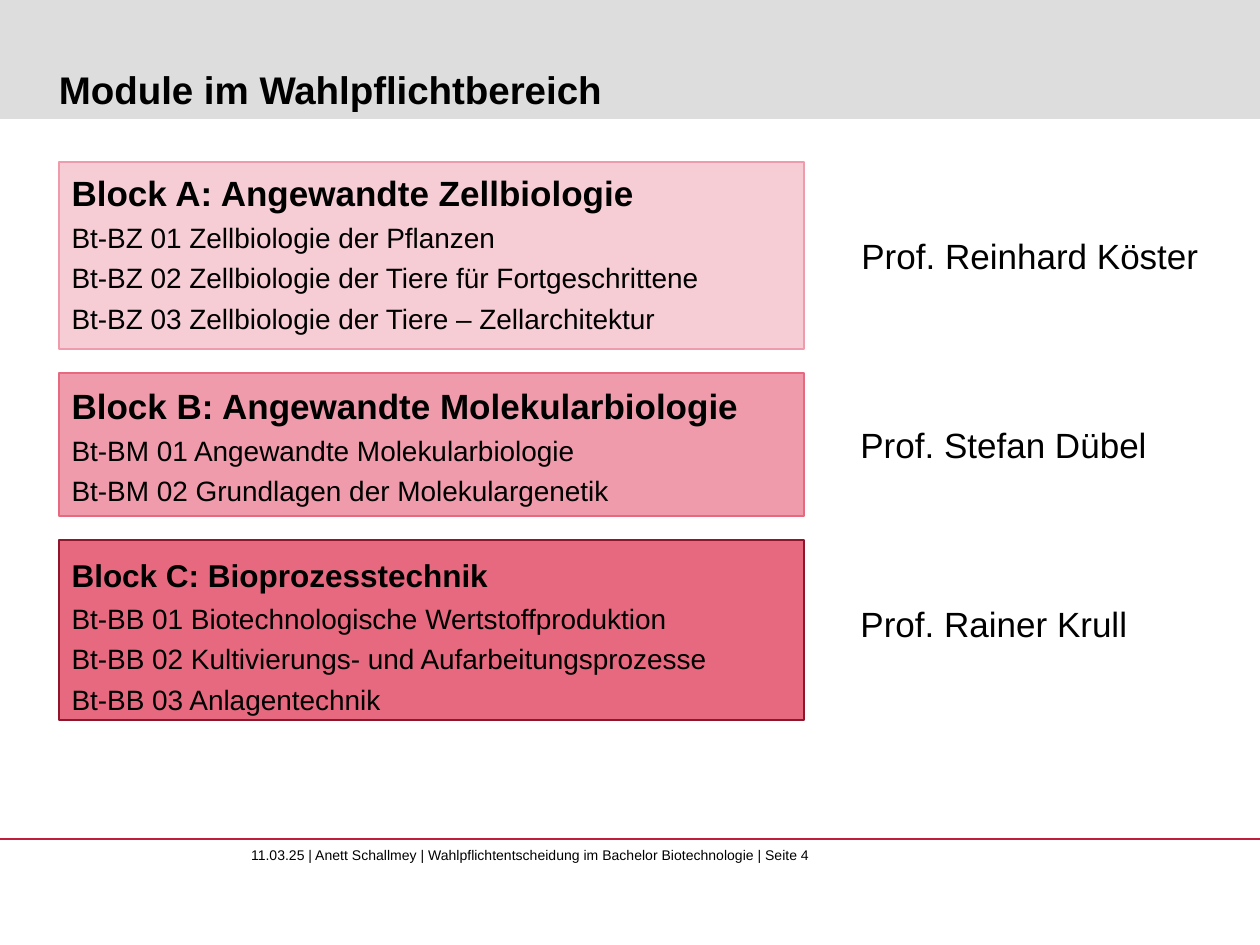
"""Build the slide that lists the elective module blocks and their heads."""
from typing import NamedTuple

from lxml import etree
from pptx import Presentation
from pptx import util as u
from pptx.dml.color import RGBColor
from pptx.enum import shapes, text
from pptx.oxml.ns import qn

SCALE = 914400 / 126
BLACK = RGBColor(0x00, 0x00, 0x00)
GREY = RGBColor(0xDD, 0xDD, 0xDD)
RED = RGBColor(0xBE, 0x1E, 0x3C)
PALE = RGBColor(0xF7, 0xCD, 0xD5)
PINK = RGBColor(0xEF, 0x9B, 0xAB)
ROSE = RGBColor(0xE7, 0x69, 0x80)
DARK = RGBColor(0x8E, 0x17, 0x2D)
LEFT, WIDE = 59, 745


class Box(NamedTuple):
    x: int
    y: int
    w: int
    h: int


class Block(NamedTuple):
    top: int
    high: int
    fill: RGBColor
    edge: RGBColor
    head: str
    size: int
    items: list[str]
    prof: str
    spot: Box


BLOCKS = [
    Block(162, 187, PALE, PINK, "Block A: Angewandte Zellbiologie", 20,
          ["Bt-BZ 01 Zellbiologie der Pflanzen",
           "Bt-BZ 02 Zellbiologie der Tiere für Fortgeschrittene",
           "Bt-BZ 03 Zellbiologie der Tiere – Zellarchitektur"],
          "Prof. Reinhard Köster", Box(849, 228, 365, 55)),
    Block(373, 143, PINK, ROSE, "Block B: Angewandte Molekularbiologie", 20,
          ["Bt-BM 01 Angewandte Molekularbiologie",
           "Bt-BM 02 Grundlagen der Molekulargenetik"],
          "Prof. Stefan Dübel", Box(848, 417, 314, 55)),
    Block(540, 180, ROSE, DARK, "Block C: Bioprozesstechnik", 18,
          ["Bt-BB 01 Biotechnologische Wertstoffproduktion",
           "Bt-BB 02 Kultivierungs- und Aufarbeitungsprozesse",
           "Bt-BB 03 Anlagentechnik"],
          "Prof. Rainer Krull", Box(848, 596, 295, 55)),
]


def px(num: int) -> int:
    return round(num * SCALE)


def put(obj, **vals) -> None:
    for key, val in vals.items():
        setattr(obj, key, val)


def style(para, size: int, bold: bool = False) -> None:
    put(para.font, name="Arial", size=u.Pt(size), bold=bold)
    para.font.color.rgb = BLACK


def rect(slide, box: Box, fill: RGBColor, edge: RGBColor | None = None) -> None:
    shape = slide.shapes.add_shape(shapes.MSO_SHAPE.RECTANGLE, *map(px, box))
    shape.shadow.inherit = False
    shape.fill.solid()
    shape.fill.fore_color.rgb = fill
    if edge is None:
        shape.line.fill.background()
    else:
        shape.line.color.rgb = edge
        shape.line.width = u.Pt(1.5)


def rule(slide, y: int) -> None:
    line = slide.shapes.add_connector(
        shapes.MSO_CONNECTOR.STRAIGHT, 0, px(y), px(1260), px(y))
    line.line.color.rgb = RED
    line.line.width = u.Pt(0.75)
    etree.SubElement(line._element.spPr, qn("a:effectLst"))


def label(slide, box: Box, words: str, size: int, inset: bool = True) -> None:
    frame = slide.shapes.add_textbox(*map(px, box)).text_frame
    put(frame, text=words, word_wrap=False,
        auto_size=text.MSO_AUTO_SIZE.SHAPE_TO_FIT_TEXT)
    if not inset:
        put(frame, margin_left=0, margin_right=0, margin_top=0, margin_bottom=0)
    style(frame.paragraphs[0], size)


def place(slide, shape, box: Box) -> None:
    """Move a placeholder and bring it to the front."""
    put(shape, **dict(zip(("left", "top", "width", "height"), map(px, box))))
    slide.shapes._spTree.append(shape._element)
    shape.text_frame.auto_size = text.MSO_AUTO_SIZE.NONE


def title(slide, words: str) -> None:
    shape = slide.shapes.title
    place(slide, shape, Box(LEFT, 15, 1154, 97))
    put(shape.text_frame, text=words, margin_left=0, margin_right=0,
        margin_top=0, margin_bottom=0,
        vertical_anchor=text.MSO_ANCHOR.BOTTOM)
    para = shape.text_frame.paragraphs[0]
    para.alignment = text.PP_ALIGN.LEFT
    style(para, 22, True)


def body(slide) -> None:
    shape = slide.placeholders[1]
    place(slide, shape, Box(LEFT, 165, 1154, 655))
    frame = shape.text_frame
    rows = []
    for block in BLOCKS:
        rows.append((block.head, block.size, True, 28 if rows else 0))
        rows += [(item, 16, False, 4) for item in block.items]
    for num, (words, size, bold, gap) in enumerate(rows):
        para = frame.add_paragraph() if num else frame.paragraphs[0]
        put(para, text=words, space_before=u.Pt(gap))
        prop = para._p.get_or_add_pPr()
        prop.set("marL", "0")
        prop.set("indent", "0")
        etree.SubElement(prop, qn("a:buNone"))
        style(para, size, bold)


def main() -> None:
    deck = Presentation()
    put(deck, slide_width=px(1260), slide_height=px(945))
    slide = deck.slides.add_slide(deck.slide_layouts[1])
    rect(slide, Box(0, 0, 1260, 119), GREY)
    rule(slide, 839)
    label(slide, Box(251, 847, 588, 34),
          "11.03.25 | Anett Schallmey | Wahlpflichtentscheidung im Bachelor "
          "Biotechnologie | Seite 4", 8, inset=False)
    for block in BLOCKS:
        rect(slide, Box(LEFT, block.top, WIDE, block.high), block.fill, block.edge)
    title(slide, "Module im Wahlpflichtbereich")
    body(slide)
    for block in BLOCKS:
        label(slide, block.spot, block.prof, 20)
    deck.save("out.pptx")


if __name__ == "__main__":
    main()
